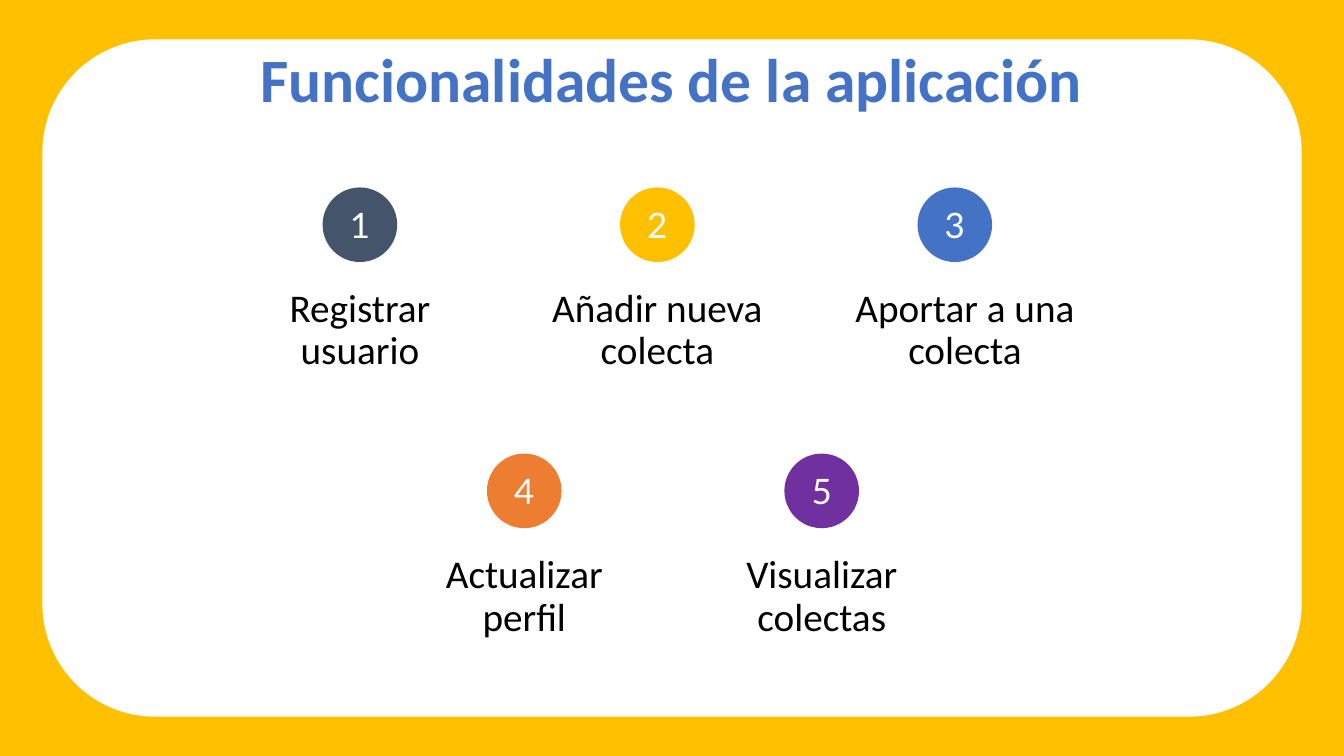
from dataclasses import dataclass

from pptx import Presentation
from pptx.dml.color import RGBColor
from pptx.enum.shapes import MSO_SHAPE
from pptx.enum.text import MSO_ANCHOR, PP_ALIGN
from pptx.util import Inches, Pt

ROUNDED = MSO_SHAPE.ROUNDED_RECTANGLE
OVAL = MSO_SHAPE.OVAL
MIDDLE = MSO_ANCHOR.MIDDLE
CENTER = PP_ALIGN.CENTER


@dataclass(frozen=True)
class Theme:
    gold: str = "FFC000"
    white: str = "FFFFFF"
    black: str = "000000"
    blue: str = "4472C4"
    slate: str = "44546A"
    orange: str = "ED7D31"
    purple: str = "7030A0"
    text_font: str = "Calibri"
    number_font: str = "Lato"
    title_size: int = 44
    label_size: int = 28
    number_size: int = 25


@dataclass(frozen=True)
class Box:
    left: float
    top: float
    width: float
    height: float

    def lengths(self):
        return [Inches(n) for n in (self.left, self.top, self.width, self.height)]


@dataclass(frozen=True)
class Feature:
    label: str
    color: str
    label_shift: float = 0


THEME = Theme()
SLIDE_WIDTH, SLIDE_HEIGHT = 13.33, 7.5
PANEL = Box(0.42, 0.39, 12.49, 6.72)
TITLE = Box(1.05, 0.4, 11.23, 0.84)
CELL_WIDTH, CELL_HEIGHT = 2.52, 2.11
COLUMN_STEP, ROW_STEP = 2.95, 2.64
GRID_TOP = 1.86
ROW_LEFTS = (2.31, 3.94)
CIRCLE = 0.74
FEATURE_ROWS = (
    (
        Feature("Registrar usuario", THEME.slate),
        Feature("Añadir nueva colecta", THEME.gold),
        Feature("Aportar a una colecta", THEME.blue, 0.1),
    ),
    (
        Feature("Actualizar perfil", THEME.orange),
        Feature("Visualizar colectas", THEME.purple),
    ),
)


def add_filled_shape(slide, kind, box, color):
    shape = slide.shapes.add_shape(kind, *box.lengths())
    shape.shadow.inherit = False
    shape.fill.solid()
    shape.fill.fore_color.rgb = RGBColor.from_string(color)
    shape.line.fill.background()
    return shape


def write_text(shape, text, font, size, color, bold=False, spacing=1.0, inset=0.1):
    text_frame = shape.text_frame
    text_frame.text = text
    text_frame.word_wrap = True
    text_frame.vertical_anchor = MIDDLE
    text_frame.margin_left = text_frame.margin_right = Inches(inset)
    text_frame.margin_top = text_frame.margin_bottom = Inches(inset)
    paragraph = text_frame.paragraphs[0]
    paragraph.alignment = CENTER
    paragraph.line_spacing = spacing
    run_font = paragraph.runs[0].font
    run_font.name = font
    run_font.size = Pt(size)
    run_font.bold = bold
    run_font.color.rgb = RGBColor.from_string(color)


def add_panel(slide, box):
    panel = add_filled_shape(slide, ROUNDED, box, THEME.white)
    panel.adjustments[0] = 0.167


def add_title(slide, box, text):
    title = slide.shapes.add_textbox(*box.lengths())
    write_text(title, text, THEME.text_font, THEME.title_size, THEME.blue,
               bold=True, spacing=0.9, inset=0.13)


def add_feature(slide, box, number, feature):
    circle_left = box.left + (box.width - CIRCLE) / 2
    circle_box = Box(circle_left, box.top, CIRCLE, CIRCLE)
    circle = add_filled_shape(slide, OVAL, circle_box, feature.color)
    write_text(circle, str(number), THEME.number_font, THEME.number_size, THEME.white)
    label_box = Box(box.left + feature.label_shift, box.top + CIRCLE,
                    box.width, box.height - CIRCLE)
    label = slide.shapes.add_textbox(*label_box.lengths())
    write_text(label, feature.label, THEME.text_font, THEME.label_size, THEME.black,
               spacing=0.9)


def add_feature_grid(slide):
    number = 1
    for row, (left, features) in enumerate(zip(ROW_LEFTS, FEATURE_ROWS)):
        for column, feature in enumerate(features):
            box = Box(left + column * COLUMN_STEP, GRID_TOP + row * ROW_STEP,
                      CELL_WIDTH, CELL_HEIGHT)
            add_feature(slide, box, number, feature)
            number += 1


def main():
    presentation = Presentation()
    presentation.slide_width = Inches(SLIDE_WIDTH)
    presentation.slide_height = Inches(SLIDE_HEIGHT)
    slide = presentation.slides.add_slide(presentation.slide_layouts[6])
    slide.background.fill.solid()
    slide.background.fill.fore_color.rgb = RGBColor.from_string(THEME.gold)
    add_panel(slide, PANEL)
    add_title(slide, TITLE, "Funcionalidades de la aplicación")
    add_feature_grid(slide)
    presentation.save("out.pptx")


if __name__ == "__main__":
    main()
